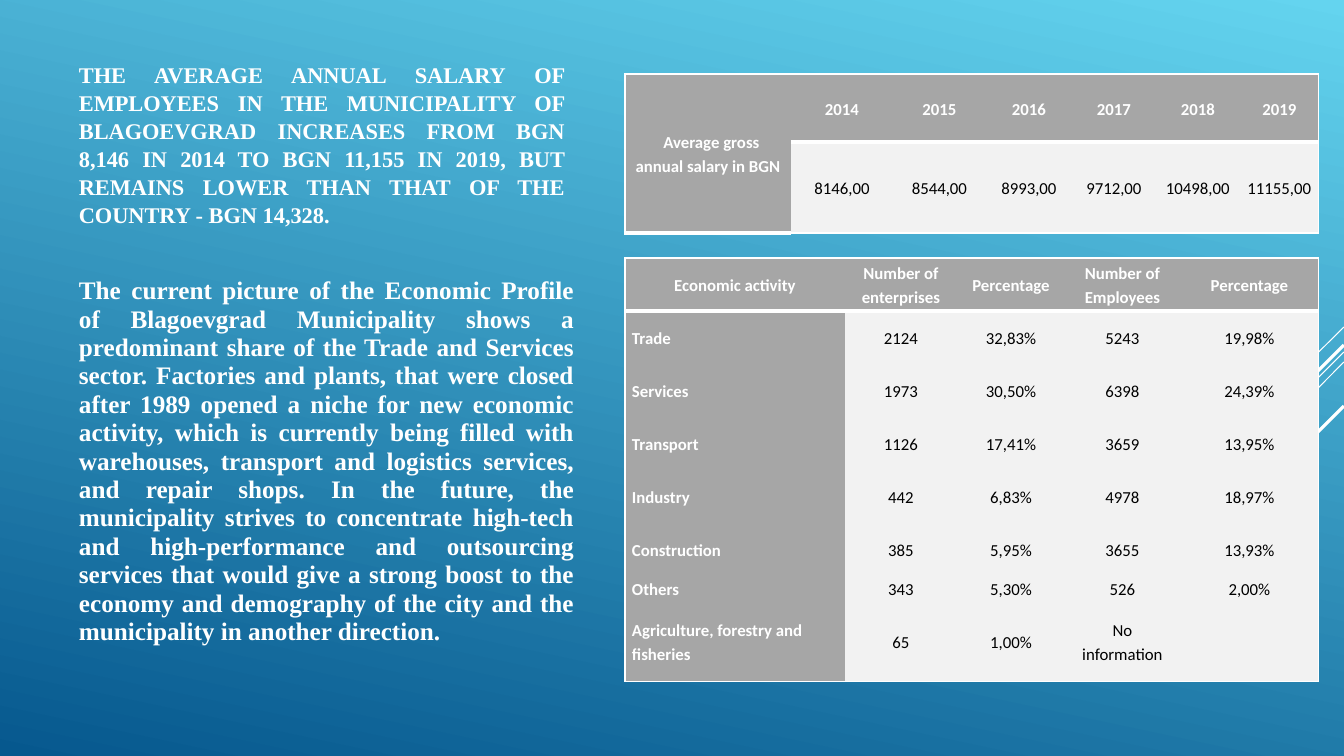
import pptx
import pptx.dml.color
import pptx.enum.shapes
import pptx.enum.text
import pptx.oxml
import pptx.oxml.ns
import pptx.util

RGBColor = pptx.dml.color.RGBColor
WHITE = RGBColor(0xFF, 0xFF, 0xFF)
BLACK = RGBColor(0x00, 0x00, 0x00)
HEADER_GREY = RGBColor(0xA6, 0xA6, 0xA6)
CELL_GREY = RGBColor(0xF2, 0xF2, 0xF2)
SKY = RGBColor(0x64, 0xD4, 0xEF)
OCEAN = RGBColor(0x06, 0x58, 0x8E)

ALIGN = pptx.enum.text.PP_ALIGN
ANCHOR = pptx.enum.text.MSO_ANCHOR
PLAIN_TABLE = "{2D5ABB26-0587-4C30-8999-92F81FD0307C}"

SALARY_TEXT = (
    "THE AVERAGE ANNUAL SALARY OF EMPLOYEES IN THE MUNICIPALITY OF "
    "BLAGOEVGRAD INCREASES FROM BGN 8,146 IN 2014 TO BGN 11,155 IN 2019, "
    "BUT REMAINS LOWER THAN THAT OF THE COUNTRY - BGN 14,328."
)
PROFILE_TEXT = (
    "The current picture of the Economic Profile of Blagoevgrad Municipality "
    "shows a predominant share of the Trade and Services sector. Factories and "
    "plants, that were closed after 1989 opened a niche for new economic "
    "activity, which is currently being filled with warehouses, transport and "
    "logistics services, and repair shops. In the future, the municipality "
    "strives to concentrate high-tech and high-performance and outsourcing "
    "services that would give a strong boost to the economy and demography of "
    "the city and the municipality in another direction."
)
SALARIES = [
    ["Average gross annual salary in BGN",
     "2014", "2015", "2016", "2017", "2018", "2019"],
    ["", "8146,00", "8544,00", "8993,00", "9712,00", "10498,00", "11155,00"],
]
ACTIVITIES = [
    ["Economic activity", "Number of enterprises", "Percentage",
     "Number of Employees", "Percentage"],
    ["Trade", "2124", "32,83%", "5243", "19,98%"],
    ["Services", "1973", "30,50%", "6398", "24,39%"],
    ["Transport", "1126", "17,41%", "3659", "13,95%"],
    ["Industry", "442", "6,83%", "4978", "18,97%"],
    ["Construction", "385", "5,95%", "3655", "13,93%"],
    ["Others", "343", "5,30%", "526", "2,00%"],
    ["Agriculture, forestry and fisheries", "65", "1,00%", "No information", ""],
]
# Stripes: start y at the right edge, end x, end y, line width in points
STRIPES = [
    (327, 1243, 427, 0.75),
    (352, 1015, 680, 0.75),
    (362, 1135, 572, 0.75),
    (345, 1151, 537, 2.25),
    (406, 1204, 546, 2.25),
]
SLIDE_W, SLIDE_H = 1344, 756


def px(length):
    return pptx.util.Emu(round(length * 12192000 / SLIDE_W))


def apply(target, values):
    for name, value in values.items():
        setattr(target, name, value)


class SlideBuilder:
    body_font = "Times New Roman"
    table_font = "Calibri"

    def __init__(self, slide):
        self.slide = slide

    def background(self, start, end, angle):
        fill = self.slide.background.fill
        fill.gradient()
        fill.gradient_angle = angle
        for stop, colour, position in zip(fill.gradient_stops, (start, end), (0, 1)):
            stop.color.rgb = colour
            stop.position = position

    def line(self, x1, y1, x2, y2, width):
        stripe = self.slide.shapes.add_connector(
            pptx.enum.shapes.MSO_CONNECTOR.STRAIGHT, px(x1), px(y1), px(x2), px(y2))
        stripe.line.color.rgb = WHITE
        stripe.line.width = pptx.util.Pt(width)
        stripe._element.spPr.append(
            pptx.oxml.parse_xml(f'<a:effectLst {pptx.oxml.ns.nsdecls("a")}/>'))

    def fill_paragraph(self, paragraph, text, colour, layout, font):
        apply(paragraph, layout)
        run = paragraph.add_run()
        run.text = text
        apply(run.font, font)
        run.font.color.rgb = colour

    def text(self, box, text, size, anchor, layout):
        frame = self.slide.shapes.add_textbox(*map(px, box)).text_frame
        apply(frame, {"word_wrap": True, "vertical_anchor": anchor})
        self.fill_paragraph(frame.paragraphs[0], text, WHITE, layout, {
            "name": self.body_font, "size": pptx.util.Pt(size), "bold": True})

    def border(self, cell, side, width):
        cell._tc.get_or_add_tcPr().append(pptx.oxml.parse_xml(
            f'<a:ln{side} {pptx.oxml.ns.nsdecls("a")} w="{int(pptx.util.Pt(width))}">'
            f'<a:solidFill><a:srgbClr val="{WHITE}"/></a:solidFill></a:ln{side}>'))

    def table(self, left, top, widths, heights, rows, spacing=0):
        last_row, last_col = len(rows) - 1, len(widths) - 1
        table = self.slide.shapes.add_table(
            len(rows), len(widths), px(left), px(top),
            px(sum(widths)), px(sum(heights))).table
        apply(table, {"first_row": False, "horz_banding": False})
        table._tbl.tblPr.find(pptx.oxml.ns.qn("a:tableStyleId")).text = PLAIN_TABLE
        for column, width in zip(table.columns, widths):
            column.width = px(width)
        for row, height in zip(table.rows, heights):
            row.height = px(height)

        for r, values in enumerate(rows):
            for c, value in enumerate(values):
                cell = table.cell(r, c)
                heading = r == 0 or c == 0
                apply(cell, {
                    "margin_left": px(7), "margin_right": px(7),
                    "margin_top": 0, "margin_bottom": 0,
                    "vertical_anchor": ANCHOR.MIDDLE})
                # White outer frame and a thick rule under the header
                edges = {"L": c == 0, "R": c == last_col, "T": r == 0,
                         "B": 3 if r == 0 else r == last_row}
                for side, width in edges.items():
                    if width:
                        self.border(cell, side, int(width))
                cell.fill.solid()
                cell.fill.fore_color.rgb = HEADER_GREY if heading else CELL_GREY
                if value:
                    gap = pptx.util.Pt(spacing if c else 0)
                    self.fill_paragraph(
                        cell.text_frame.paragraphs[0], value,
                        WHITE if heading else BLACK,
                        {"alignment": ALIGN.LEFT if c == 0 and r else ALIGN.CENTER,
                         "line_spacing": 1.15,
                         "space_before": gap, "space_after": gap},
                        {"name": self.table_font, "size": pptx.util.Pt(12),
                         "bold": heading})
        return table


def main():
    deck = pptx.Presentation()
    apply(deck, {"slide_width": px(SLIDE_W), "slide_height": px(SLIDE_H)})
    page = SlideBuilder(deck.slides.add_slide(deck.slide_layouts[6]))

    # Background and diagonal stripes
    page.background(SKY, OCEAN, 258)
    for start_y, end_x, end_y, width in STRIPES:
        page.line(SLIDE_W, start_y, end_x, end_y, width)

    # Salary statement and table
    page.text((69, 46, 506, 187), SALARY_TEXT, 16, ANCHOR.BOTTOM,
              {"alignment": ALIGN.JUSTIFY, "line_spacing": 1.04})
    salaries = page.table(625, 74, [166, 102, 93, 86, 84, 84, 79], [68, 91],
                          SALARIES, spacing=12)
    salaries.cell(0, 0).merge(salaries.cell(1, 0))
    salary_label = salaries.cell(0, 0).text_frame.paragraphs[0]
    salary_label._p.get_or_add_pPr().set("indent", str(int(px(7))))

    # Economic profile and table
    page.text((69, 272, 515, 409), PROFILE_TEXT, 18, ANCHOR.TOP,
              {"alignment": ALIGN.JUSTIFY, "line_spacing": 0.94,
               "space_before": pptx.util.Pt(4), "space_after": pptx.util.Pt(6)})
    page.table(625, 258, [220, 112, 108, 115, 139], [53] * 6 + [25, 81], ACTIVITIES)

    deck.save("out.pptx")


if __name__ == "__main__":
    main()
